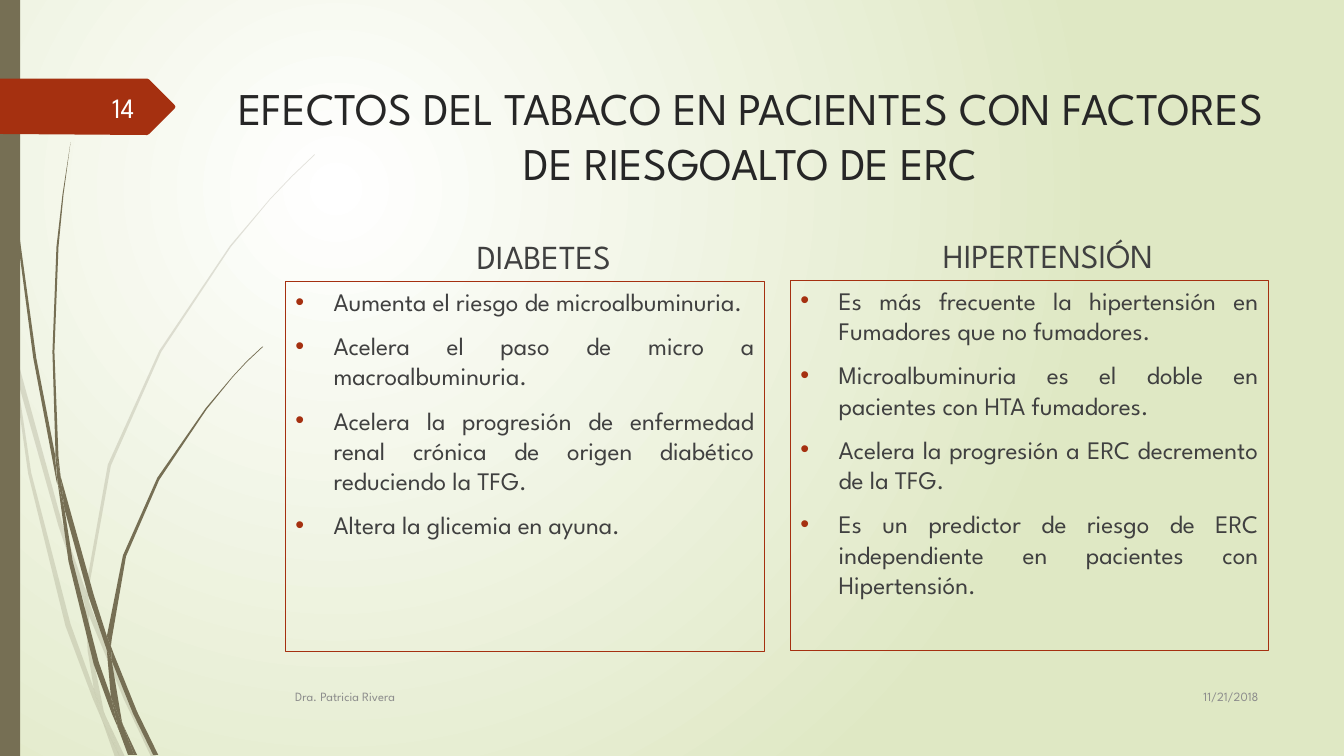
from dataclasses import dataclass

from lxml import etree
from pptx import Presentation
from pptx.dml.color import RGBColor
from pptx.enum.shapes import MSO_SHAPE
from pptx.enum.text import MSO_ANCHOR, PP_ALIGN
from pptx.oxml.ns import qn
from pptx.util import Inches, Pt

RECT = MSO_SHAPE.RECTANGLE
TOP, MIDDLE, BOTTOM = MSO_ANCHOR.TOP, MSO_ANCHOR.MIDDLE, MSO_ANCHOR.BOTTOM
LEFT, CENTER, RIGHT, JUSTIFY = (PP_ALIGN.LEFT, PP_ALIGN.CENTER,
                                PP_ALIGN.RIGHT, PP_ALIGN.JUSTIFY)
FACE = "League Spartan"
COLORS = {"white": "FFFFFF", "green": "DFE8C4", "olive": "766F54",
          "red": "A53010", "title": "262626", "body": "404040",
          "footer": "8C8C8C", "number": "FEFFFF"}
Points = list[tuple[int, int]]


@dataclass
class Style:
    color: str
    font: dict
    para: dict
    frame: dict


@dataclass
class Label:
    text: str
    style: str
    box: tuple[float, float, float, float]


@dataclass
class Panel:
    box: tuple[float, float, float, float]
    items: list[str]


STYLES = {
    "title": Style("title", {"size": Pt(32.4)}, {"alignment": CENTER},
                   {"vertical_anchor": TOP, "margin_top": Inches(0.58)}),
    "heading": Style("body", {"size": Pt(24)},
                     {"alignment": CENTER, "space_before": Pt(10)},
                     {"vertical_anchor": BOTTOM}),
    "list": Style("body", {"size": Pt(18)},
                  {"alignment": JUSTIFY, "space_before": Pt(10)},
                  {"vertical_anchor": TOP}),
    "author": Style("footer", {"size": Pt(9)}, {"alignment": LEFT},
                    {"vertical_anchor": MIDDLE}),
    "date": Style("footer", {"size": Pt(9)}, {"alignment": RIGHT},
                  {"vertical_anchor": MIDDLE}),
    "number": Style("number", {"size": Pt(20)}, {"alignment": RIGHT},
                    {"vertical_anchor": MIDDLE}),
}

LABELS = [
    Label("EFECTOS DEL TABACO EN PACIENTES CON FACTORES DE RIESGOALTO DE ERC",
          "title", (2.14, 0.22, 10.61, 1.4)),
    Label("DIABETES", "heading", (3.21, 2.16, 4.37, 0.63)),
    Label("HIPERTENSIÓN", "heading", (8.21, 2.15, 4.37, 0.63)),
    Label("11/21/2018", "date", (11.33, 6.7, 1.25, 0.41)),
    Label("Dra. Patricia Rivera", "author", (2.83, 6.71, 8.33, 0.4)),
    Label("14", "number", (0.58, 0.86, 0.85, 0.4)),
]

PANELS = [
    Panel((2.83, 2.79, 4.75, 3.67), [
        "Aumenta el riesgo de microalbuminuria.",
        "Acelera el paso de micro a macroalbuminuria.",
        "Acelera la progresión de enfermedad renal crónica de origen "
        "diabético reduciendo la TFG.",
        "Altera la glicemia en ayuna."]),
    Panel((7.84, 2.78, 4.74, 3.67), [
        "Es más frecuente la hipertensión en Fumadores que no fumadores.",
        "Microalbuminuria es el doble en pacientes con HTA fumadores.",
        "Acelera la progresión a ERC decremento de la TFG.",
        "Es un predictor de riesgo de ERC independiente en pacientes con "
        "Hipertensión."]),
]

# Outlines in hundredths of an inch
PALE: list[Points] = [
    [(11, 350), (9, 322), (0, 282), (0, 299), (10, 344)],
    [(58, 522), (84, 599), (85, 586), (62, 520), (14, 345), (17, 376)],
    [(92, 607), (88, 596), (88, 610), (123, 694), (150, 751), (155, 751),
     (127, 692)],
    [(119, 751), (124, 751), (105, 711)],
    [(93, 683), (70, 619), (31, 469), (17, 376), (11, 350), (28, 470),
     (65, 621), (92, 693), (101, 714), (99, 707)],
    [(84, 599), (87, 646), (93, 683), (96, 692), (105, 711), (103, 706),
     (91, 646), (88, 610), (88, 608)],
    [(88, 584), (110, 462), (160, 349), (229, 245), (268, 198), (290, 175),
     (312, 154), (312, 153), (289, 175), (268, 197), (228, 244), (158, 348),
     (107, 461), (85, 584), (85, 586), (88, 596)],
    [(101, 714), (114, 751), (119, 751)],
    [(88, 608), (88, 610), (88, 596), (85, 586), (84, 599)],
    [(96, 692), (93, 683), (99, 707), (101, 714), (119, 751), (105, 711)],
]
DARK: list[Points] = [
    [(7, 110), (17, 233), (33, 355), (56, 477), (57, 481), (55, 457),
     (55, 453), (36, 355), (19, 232), (8, 109), (5, 48), (4, 0), (3, 0),
     (4, 48)],
    [(88, 592), (106, 645), (106, 633), (106, 631), (93, 590), (60, 472),
     (64, 505)],
    [(113, 649), (110, 641), (111, 656), (132, 708), (152, 749), (157, 749),
     (136, 706)],
    [(110, 691), (98, 657), (72, 556), (64, 505), (57, 477), (68, 557),
     (93, 659), (111, 708), (117, 722), (116, 717)],
    [(60, 472), (58, 453), (54, 349), (58, 245), (63, 193), (70, 141),
     (62, 193), (56, 245), (52, 349), (55, 449)],
    [(133, 749), (136, 749), (122, 719)],
    [(57, 477), (64, 505), (60, 472), (55, 449), (55, 453)],
    [(111, 633), (125, 552), (158, 476), (205, 406), (231, 374), (245, 359),
     (261, 344), (260, 344), (245, 358), (231, 373), (204, 405), (156, 474),
     (122, 551), (106, 631), (110, 641)],
    [(117, 722), (127, 749), (131, 749)],
    [(106, 645), (110, 691), (116, 706), (122, 719), (121, 716), (111, 656),
     (109, 651)],
    [(106, 645), (109, 651), (111, 656), (110, 641), (106, 631), (106, 633)],
    [(116, 706), (110, 691), (116, 717), (117, 722), (130, 749), (133, 749),
     (122, 719)],
]
TAG: Points = [(0, 78), (146, 78), (148, 79), (173, 104), (174, 106),
               (173, 108), (148, 133), (146, 134), (0, 133)]


def rgb(name: str) -> RGBColor:
    return RGBColor.from_string(COLORS[name])


def apply(target, values: dict) -> None:
    for key, value in values.items():
        setattr(target, key, value)


def paint(shape, color: str) -> None:
    shape.shadow.inherit = False
    shape.fill.solid()
    shape.fill.fore_color.rgb = rgb(color)
    shape.line.fill.background()


def backdrop(slide) -> None:
    """Fill the slide with a round gradient centred in its upper left part."""
    fill = slide.background.fill
    fill.gradient()
    for stop, name in zip(fill.gradient_stops, ("white", "green")):
        stop.color.rgb = rgb(name)
    grad = slide.element.find(".//" + qn("a:gradFill"))
    grad.remove(grad.find(qn("a:lin")))
    circle = etree.SubElement(grad, qn("a:path"), path="circle")
    etree.SubElement(circle, qn("a:fillToRect"),
                     l="50000", t="50000", r="100000", b="100000")


def outline(slide, points: Points, color: str, alpha: int = 100) -> None:
    pen = slide.shapes.build_freeform(*points[0], scale=Inches(0.01))
    pen.add_line_segments(points[1:], close=True)
    shape = pen.convert_to_shape()
    paint(shape, color)
    if alpha < 100:
        tint = shape.element.spPr.find(qn("a:solidFill"))[0]
        etree.SubElement(tint, qn("a:alpha"), val=str(alpha * 1000))


def bullet(para) -> None:
    props = para._p.get_or_add_pPr()
    indent = Inches(0.38)
    props.set("marL", str(indent))
    props.set("indent", str(-indent))
    tint = etree.SubElement(props, qn("a:buClr"))
    etree.SubElement(tint, qn("a:srgbClr"), val=COLORS["red"])
    etree.SubElement(props, qn("a:buFont"), typeface="Arial")
    etree.SubElement(props, qn("a:buChar"), char="•")


def write(shape, lines: list[str], style: Style, dots: bool = False) -> None:
    frame = shape.text_frame
    apply(frame, {"word_wrap": True, **style.frame})
    for index, line in enumerate(lines):
        para = frame.add_paragraph() if index else frame.paragraphs[0]
        apply(para, style.para)
        if dots:
            bullet(para)
        run = para.add_run()
        run.text = line
        apply(run.font, {"name": FACE, **style.font})
        run.font.color.rgb = rgb(style.color)


def main() -> None:
    deck = Presentation()
    deck.slide_width, deck.slide_height = Inches(13.33), Inches(7.5)
    slide = deck.slides.add_slide(deck.slide_layouts[6])
    backdrop(slide)
    for points in PALE:
        outline(slide, points, "olive", 20)
    for points in DARK:
        outline(slide, points, "olive")
    paint(slide.shapes.add_shape(RECT, 0, 0, Inches(0.2), Inches(7.5)), "olive")
    outline(slide, TAG, "red")
    for panel in PANELS:
        shape = slide.shapes.add_shape(RECT, *map(Inches, panel.box))
        shape.shadow.inherit = False
        shape.fill.background()
        shape.line.color.rgb = rgb("red")
        shape.line.width = Pt(0.75)
        write(shape, panel.items, STYLES["list"], dots=True)
    for label in LABELS:
        shape = slide.shapes.add_textbox(*map(Inches, label.box))
        write(shape, [label.text], STYLES[label.style])
    deck.save("out.pptx")


if __name__ == "__main__":
    main()
